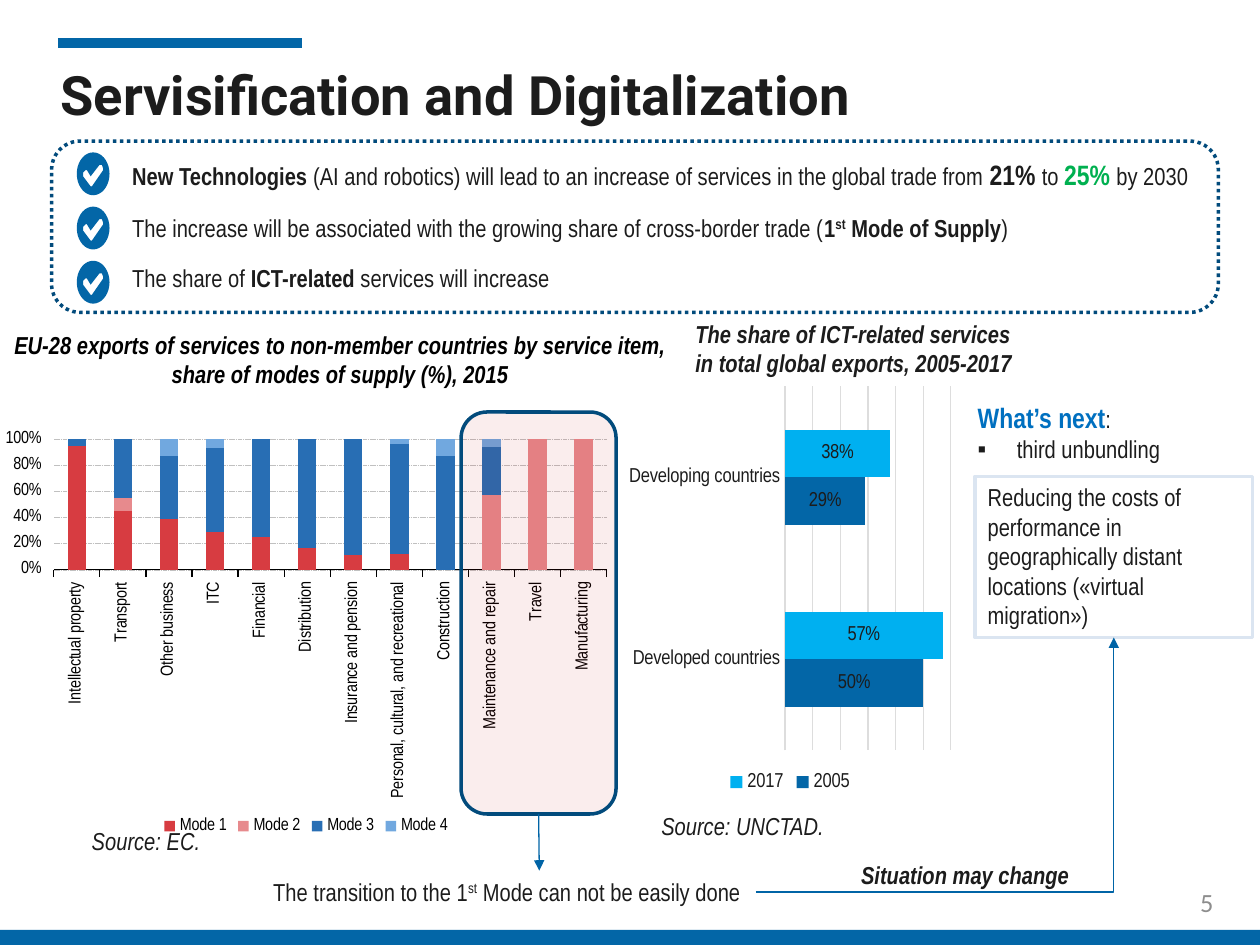
import math
from dataclasses import dataclass

from lxml import etree
from pptx import Presentation
from pptx import util as u
from pptx.chart import data as chart_data
from pptx.dml.color import RGBColor
from pptx.enum import chart as ch, dml, shapes, text
from pptx.oxml.ns import qn

Inches, Pt = u.Inches, u.Pt
CENTER, RIGHT = text.PP_ALIGN.CENTER, text.PP_ALIGN.RIGHT


@dataclass(frozen=True)
class Theme:
    font: str = "Arial Narrow"
    title_font: str = "Roboto"
    number_font: str = "Calibri"
    ink: str = "1C1C1C"
    black: str = "000000"
    white: str = "FFFFFF"
    accent: str = "0366A7"
    outline: str = "024B7C"
    arrow: str = "0064A6"
    heading: str = "0070C0"
    growth: str = "00B050"
    warning: str = "C00000"
    pale: str = "DBE5F1"
    muted: str = "8D8D8D"
    grid: str = "DDDDDD"
    dash_grid: str = "C0C0C0"
    modes: tuple = ("D73C41", "E78A8D", "286EB4", "71A8DF")
    years: tuple = ("0366A7", "00B0F0")
    title: float = 31
    large: float = 16
    number: float = 15
    body: float = 14
    share_chart: float = 11.5
    modes_chart: float = 10


T = Theme()
BOLD = {"bold": True}
CAPTION = {"bold": True, "italic": True}
SUPER = {"superscript": True}


@dataclass(frozen=True)
class Box:
    left: float
    top: float
    width: float
    height: float

    def inner(self, dx, dy, width, height):
        return Box(self.left + dx, self.top + dy, width, height)

    def emu(self):
        return [Inches(v) for v in (self.left, self.top, self.width, self.height)]


def rgb(color):
    return RGBColor.from_string(color)


def write(frame, paragraphs, align=None, anchor=text.MSO_ANCHOR.TOP, inset=(0.1, 0.05), grow=True, **style):
    """Fill a frame; each paragraph is a list of strings or (string, style) runs."""
    frame.word_wrap = True
    frame.auto_size = text.MSO_AUTO_SIZE.SHAPE_TO_FIT_TEXT if grow else text.MSO_AUTO_SIZE.NONE
    frame.vertical_anchor = anchor
    frame.margin_left = frame.margin_right = Inches(inset[0])
    frame.margin_top = frame.margin_bottom = Inches(inset[1])
    for i, runs in enumerate(paragraphs):
        para = frame.add_paragraph() if i else frame.paragraphs[0]
        para.alignment = align or text.PP_ALIGN.LEFT
        para.space_before = Pt(0)
        for item in runs:
            words, extra = (item, {}) if isinstance(item, str) else item
            look = {"size": T.body, "color": T.ink, "font": T.font, **style, **extra}
            run = para.add_run()
            run.text = words
            run.font.name, run.font.size = look["font"], Pt(look["size"])
            run.font.bold, run.font.italic = look.get("bold", False), look.get("italic", False)
            run.font.color.rgb = rgb(look["color"])
            if look.get("superscript"):
                run.font._element.set("baseline", "30000")


def add_label(slide, box, *paragraphs, **style):
    label = slide.shapes.add_textbox(*box.emu())
    write(label.text_frame, paragraphs, **style)
    return label


def add_panel(slide, kind, box, fill=None, line=None, width=2):
    panel = slide.shapes.add_shape(kind, *box.emu())
    panel.shadow.inherit = False
    if fill:
        panel.fill.solid()
        panel.fill.fore_color.rgb = rgb(fill)
    else:
        panel.fill.background()
    if line:
        style_line(panel.line, line, width)
    else:
        panel.line.fill.background()
    return panel


def add_line(slide, kind, start, end, color=T.arrow, width=0.75, arrow=True):
    line = slide.shapes.add_connector(kind, *(Inches(v) for v in (*start, *end)))
    style_line(line.line, color, width)
    if arrow:
        etree.SubElement(line.line._get_or_add_ln(), qn("a:tailEnd"), type="triangle")
    etree.SubElement(line._element.spPr, qn("a:effectLst"))
    return line


def add_check(slide, box):
    """Draw a disc with a check mark cut out of it."""
    rx, ry = box.width / 2, box.height / 2
    angles = [math.radians(a) for a in range(0, 360, 10)]
    disc = [(rx + rx * math.cos(a), ry + ry * math.sin(a)) for a in angles]
    tick = [(0.21, 0.13), (0.2, 0.1), (0.18, 0.1), (0.11, 0.19), (0.08, 0.14), (0.07, 0.14),
            (0.05, 0.16), (0.05, 0.19), (0.11, 0.27), (0.12, 0.27), (0.21, 0.14)]
    disc, tick = ([(Inches(box.left + x), Inches(box.top + y)) for x, y in outline]
                  for outline in (disc, tick))
    builder = slide.shapes.build_freeform(*disc[0])
    builder.add_line_segments(disc[1:])
    builder.move_to(*tick[0])
    builder.add_line_segments(tick[1:])
    check = builder.convert_to_shape()
    check.shadow.inherit = False
    check.fill.solid()
    check.fill.fore_color.rgb = rgb(T.accent)
    check.line.fill.background()


def add_bar_chart(slide, kind, box, categories, series, colors, size, color, gap, overlap):
    data = chart_data.CategoryChartData(number_format="General")
    data.categories = categories
    for name, values in series.items():
        data.add_series(name, values)
    chart = slide.shapes.add_chart(kind, *box.emu(), data).chart
    chart.has_title = False
    chart.font.name, chart.font.size, chart.font.color.rgb = T.font, Pt(size), rgb(color)
    chart.has_legend = True
    chart.legend.position = ch.XL_LEGEND_POSITION.BOTTOM
    chart.legend.include_in_layout = False
    plot = chart.plots[0]
    plot.gap_width, plot.overlap, plot.vary_by_categories = gap, overlap, False
    for bars, fill in zip(plot.series, colors):
        bars.format.fill.solid()
        bars.format.fill.fore_color.rgb = rgb(fill)
    chart.value_axis.has_major_gridlines = True
    return chart


def style_line(line, color, width, dash=None):
    line.color.rgb, line.width = rgb(color), Pt(width)
    if dash:
        line.dash_style = dash


def header(slide, box):
    add_panel(slide, shapes.MSO_SHAPE.RECTANGLE, Box(0, 7.38, 10, 0.12), T.accent)
    add_line(slide, shapes.MSO_CONNECTOR.STRAIGHT, (0.46, 0.34), (2.4, 0.34), T.accent, 6, arrow=False)
    add_label(slide, Box(7.43, 6.96, 2.33, 0.4), ["5"], align=RIGHT, anchor=text.MSO_ANCHOR.MIDDLE,
              inset=(0.13, 0.06), grow=False, size=T.number, font=T.number_font, color=T.muted)
    title = slide.shapes.title
    title.left, title.top, title.width, title.height = box.emu()
    write(title.text_frame, [["Servisification and Digitalization"]], inset=(0.13, 0.06), grow=False,
          size=T.title, font=T.title_font, bold=True)


def key_points(slide, box):
    big = {"size": T.large, "bold": True}
    points = [
        (0.08, [("New Technologies", BOLD),
                " (AI and robotics) will lead to an increase of services in the global trade from ",
                ("21% ", big), "to ", ("25% ", {**big, "color": T.growth}), "by 2030"]),
        (0.52, ["The increase will be associated with the growing share of cross-border trade (",
                ("1", BOLD), ("st", {**BOLD, **SUPER}), (" Mode of Supply", BOLD), ")"]),
        (0.92, ["The share of ", ("ICT-related", BOLD), " services will increase"]),
    ]
    for i, (dy, runs) in enumerate(points):
        add_label(slide, box.inner(0.54, dy, 8.64, 0.34), runs)
        add_check(slide, box.inner(0.2, 0.09 + 0.43 * i, 0.26, 0.34))
    frame = add_panel(slide, shapes.MSO_SHAPE.ROUNDED_RECTANGLE, box, line=T.outline)
    frame.line.dash_style = dml.MSO_LINE.ROUND_DOT


def exports_by_mode(slide, box):
    """Stacked chart of exports; returns the frame around its last three items."""
    items = ["Intellectual property", "Transport", "Other business", "ITC", "Financial", "Distribution",
             "Insurance and pension", "Personal, cultural, and recreational", "Construction",
             "Maintenance and repair", "Travel", "Manufacturing"]
    no = None
    modes = {"Mode 1": (95, 45, 39, 29, 25, 17, 11, 12, no, no, no, no),
             "Mode 2": (no, 10, 0, no, no, no, no, no, no, 57, 100, 100),
             "Mode 3": (5, 45, 48, 64, 75, 83, 89, 84, 87, 37, no, no),
             "Mode 4": (no, no, 13, 7, no, no, no, 4, 13, 6, no, no)}
    chart = add_bar_chart(slide, ch.XL_CHART_TYPE.COLUMN_STACKED_100, box.inner(-0.03, 0.46, 4.92, 3.63),
                          items, modes, T.modes, T.modes_chart, T.black, 150, 100)
    values, names = chart.value_axis, chart.category_axis
    values.minimum_scale, values.maximum_scale, values.major_unit = 0, 1, 0.2
    values.tick_labels.number_format, values.tick_labels.number_format_is_linked = "0%", False
    values.format.line.fill.background()
    style_line(values.major_gridlines.format.line, T.dash_grid, 0.25, dml.MSO_LINE.SQUARE_DOT)
    style_line(names.format.line, T.black, 0.75)
    names.tick_labels.font.size = Pt(T.modes_chart)
    names._element.find(qn("c:txPr")).find(qn("a:bodyPr")).set("rot", "-5400000")
    area = chart._chartSpace.chart.plotArea
    for old in area.findall(qn("c:layout")):
        area.remove(old)
    layout = etree.Element(qn("c:layout"))
    manual = etree.SubElement(layout, qn("c:manualLayout"))
    for tag, val in (("layoutTarget", "outer"), ("xMode", "edge"), ("yMode", "edge"),
                     ("x", "0.015"), ("y", "0.108"), ("w", "0.97"), ("h", "0.803")):
        etree.SubElement(manual, qn("c:" + tag), val=val)
    area.insert(0, layout)
    hard_items = add_panel(slide, shapes.MSO_SHAPE.ROUNDED_RECTANGLE, box.inner(3.66, 0.7, 1.23, 3.19),
                           T.warning, T.outline)
    tint = hard_items._element.spPr.find(qn("a:solidFill"))[0]
    etree.SubElement(tint, qn("a:alpha"), val="7000")
    add_label(slide, box.inner(0.63, 3.94, 3.93, 0.34), ["Source: EC."], italic=True)
    add_label(slide, box.inner(0, 0, 5.4, 0.57),
              ["EU-28 exports of services to non-member countries by service item, "],
              ["share of modes of supply (%), 2015"], align=CENTER, color=T.black, **CAPTION)
    return hard_items


def ict_share(slide, box):
    add_label(slide, box.inner(0.48, 0, 3.24, 0.58), ["The share of ICT-related services"],
              ["in total global exports, 2005-2017"], **CAPTION)
    add_label(slide, box.inner(0.21, 3.91, 2.22, 0.34), ["Source: UNCTAD."], italic=True)
    chart = add_bar_chart(slide, ch.XL_CHART_TYPE.BAR_CLUSTERED, box.inner(0, 0.52, 2.66, 3.32),
                          ["Developed countries", "Developing countries"],
                          {"2005": (0.5, 0.29), "2017": (0.57, 0.38)},
                          T.years, T.share_chart, T.ink, 182, 0)
    values, names = chart.value_axis, chart.category_axis
    values.minimum_scale, values.maximum_scale, values.major_unit = 0, 0.6, 0.1
    values.visible = False
    style_line(values.major_gridlines.format.line, T.grid, 0.75)
    names.major_tick_mark = ch.XL_TICK_MARK.NONE
    style_line(names.format.line, T.grid, 0.75)
    for bars in chart.plots[0].series:
        labels = bars.data_labels
        labels.show_value, labels.position = True, ch.XL_LABEL_POSITION.CENTER
        labels.number_format, labels.number_format_is_linked = "0%", False
        labels.font.name, labels.font.size = T.font, Pt(T.share_chart)
        labels.font.color.rgb = rgb(T.ink)


def whats_next(slide, box):
    """List of next steps; returns the box with the cost note."""
    steps = slide.placeholders[1]
    steps.left, steps.top, steps.width, steps.height = box.inner(0, 0, 2.34, 0.85).emu()
    write(steps.text_frame, [[("What’s next", {"size": T.large, "color": T.heading, "bold": True}), ":"],
                             ["third unbundling"]])
    for para, indent, bullet in zip(steps.text_frame.paragraphs, (0, 0.31), (None, "▪")):
        props = para._p.get_or_add_pPr()
        props.set("marL", str(Inches(indent)))
        props.set("indent", str(-Inches(indent)))
        if bullet:
            etree.SubElement(props, qn("a:buFont"), typeface="Arial")
            etree.SubElement(props, qn("a:buChar"), char=bullet)
        else:
            etree.SubElement(props, qn("a:buNone"))
    costs = add_panel(slide, shapes.MSO_SHAPE.RECTANGLE, box.inner(0.08, 0.65, 2.2, 1.28), T.white, T.pale)
    write(costs.text_frame, [["Reducing the costs of performance in geographically distant locations "
                              "(«virtual migration»)"]])
    return costs


def transition(slide, box, hard_items, costs):
    """Conclusion below the charts, tied to the items and the cost note."""
    conclusion = add_label(slide, box.inner(0, 0.13, 3.93, 0.34),
                           ["The transition to the 1", ("st", SUPER), " Mode can not be easily done"])
    change = add_line(slide, shapes.MSO_CONNECTOR.ELBOW, (6, 7.08), (8.84, 5.06))
    change.begin_connect(conclusion, 3)
    change.end_connect(costs, 2)
    change._element.spPr.find(qn("a:prstGeom")).set("prst", "bentConnector2")
    add_label(slide, box.inner(4.48, 0, 2.22, 0.34), ["Situation may change"], align=CENTER, **CAPTION)
    down = add_line(slide, shapes.MSO_CONNECTOR.STRAIGHT, (4.28, 6.46), (4.28, 6.91))
    down.begin_connect(hard_items, 2)


def main():
    deck = Presentation()
    deck.slide_width, deck.slide_height = Inches(10), Inches(7.5)
    slide = deck.slides.add_slide(deck.slide_layouts[1])
    header(slide, Box(0.35, 0.43, 9, 0.61))
    key_points(slide, Box(0.41, 1.12, 9.26, 1.36))
    ict_share(slide, Box(4.94, 2.48, 3.72, 4.25))
    costs = whats_next(slide, Box(7.66, 3.13, 2.34, 1.93))
    hard_items = exports_by_mode(slide, Box(0, 2.57, 5.4, 4.28))
    transition(slide, Box(2.07, 6.78, 6.77, 0.47), hard_items, costs)
    deck.save("out.pptx")


if __name__ == "__main__":
    main()
